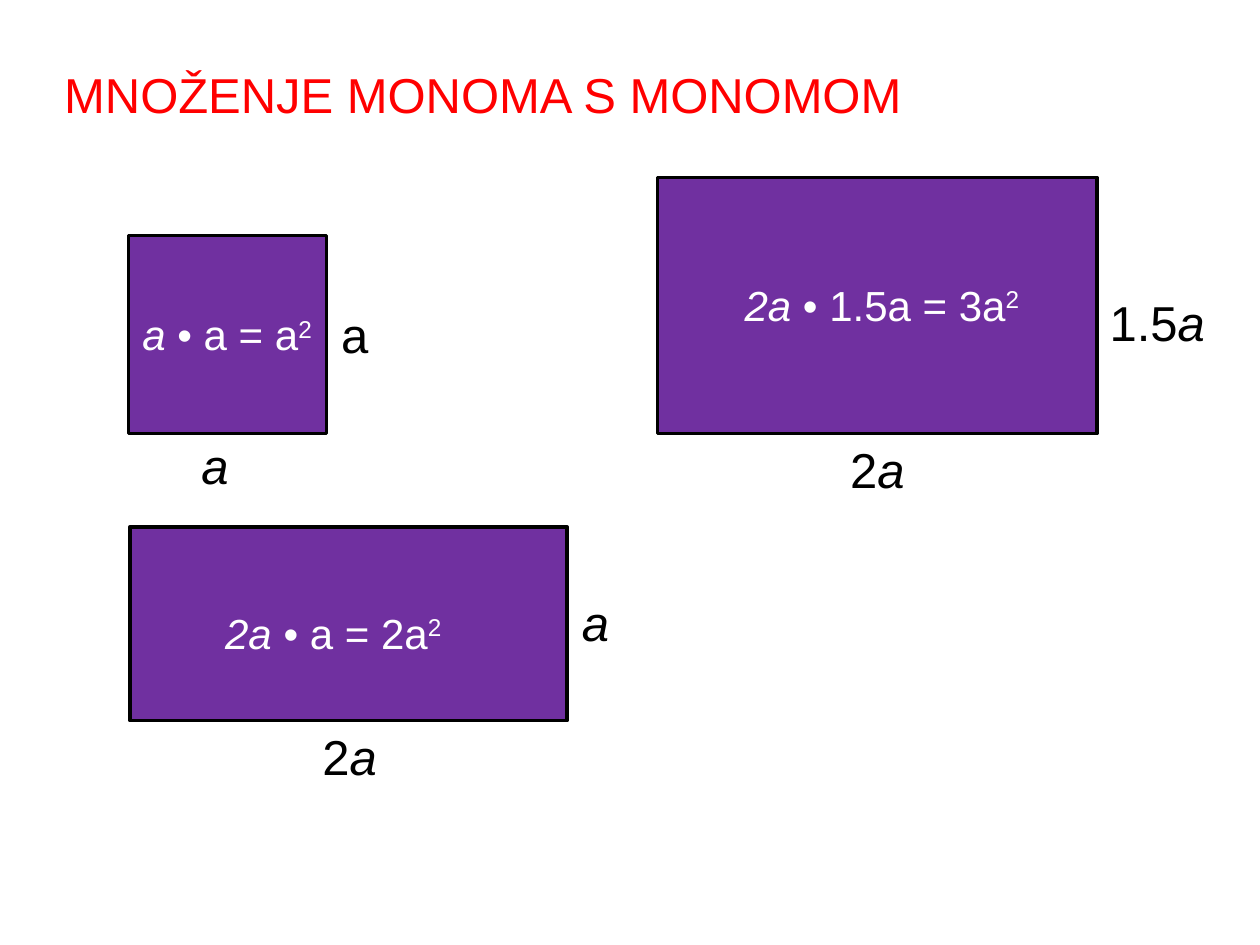
from pptx import Presentation
from pptx.dml.color import RGBColor
from pptx.enum.shapes import MSO_SHAPE
from pptx.enum.text import MSO_ANCHOR, MSO_AUTO_SIZE, PP_ALIGN
from pptx.util import Cm, Pt

RECT = MSO_SHAPE.RECTANGLE
TOP = MSO_ANCHOR.TOP
LEFT = PP_ALIGN.LEFT
FIXED = MSO_AUTO_SIZE.NONE
COLORS = {"title": "FF0000", "fill": "7030A0", "ink": "000000", "light": "FFFFFF"}
HEIGHTS = {28: 1.45, 24: 1.27}

FIGURES = [
    {
        "box": (2.59, 4.75, 3.99, 3.99),
        "base": (3.81, 8.66, 1.55, [("a", "italic")]),
        "side": (6.63, 6.02, 1.55, [("a", "")]),
        "area": (2.62, 6.1, 4.55, "a", " • a = a"),
    },
    {
        "box": (2.62, 10.62, 8.81, 3.91),
        "base": (6.25, 14.53, 2.31, [("2", ""), ("a", "italic")]),
        "side": (11.48, 11.81, 1.55, [("a", "italic")]),
        "area": (4.29, 12.12, 5.77, "2a", " • a = 2a"),
    },
    {
        "box": (13.26, 3.58, 8.86, 5.16),
        "base": (16.89, 8.74, 2.31, [("2", ""), ("a", "italic")]),
        "side": (22.12, 5.77, 2.95, [("1.5", ""), ("a", "italic")]),
        "area": (14.76, 5.51, 6.58, "2a", " • 1.5a = 3a"),
    },
]


def rgb(name):
    """Return the named colour."""
    return RGBColor.from_string(COLORS[name])


def write(frame, runs, size, color):
    """Fill a text frame with styled runs."""
    frame.word_wrap = True
    frame.auto_size = FIXED
    frame.vertical_anchor = TOP
    line = frame.paragraphs[0]
    line.alignment = LEFT
    for text, style in runs:
        run = line.add_run()
        run.text = text
        font = run.font
        font.name = "Arial"
        font.size = Pt(size)
        font.italic = style == "italic"
        font.color.rgb = rgb(color)
        if style == "super":
            run._r.get_or_add_rPr().set("baseline", "30000")


def add_title(slide, text):
    """Place and format the title."""
    title = slide.shapes.title
    title.left, title.top = Cm(1.04), Cm(1.17)
    title.width, title.height = Cm(25.5), Cm(HEIGHTS[28])
    write(title.text_frame, [(text, "")], 28, "title")


def add_box(slide, place):
    """Draw one filled rectangle."""
    box = slide.shapes.add_shape(RECT, *map(Cm, place))
    box.shadow.inherit = False
    box.fill.solid()
    box.fill.fore_color.rgb = rgb("fill")
    box.line.color.rgb = rgb("ink")
    box.line.width = Pt(2)


def add_text(slide, left, top, width, runs, size=28, color="ink"):
    """Add a one-line text box."""
    place = map(Cm, (left, top, width, HEIGHTS[size]))
    write(slide.shapes.add_textbox(*place).text_frame, runs, size, color)


def add_figure(slide, figure):
    """Draw a rectangle with its side labels and area formula."""
    add_box(slide, figure["box"])
    add_text(slide, *figure["base"])
    add_text(slide, *figure["side"])
    *place, first, rest = figure["area"]
    runs = [(first, "italic"), (rest, ""), ("2", "super")]
    add_text(slide, *place, runs, 24, "light")


def main():
    """Build and save the slide."""
    deck = Presentation()
    deck.slide_width, deck.slide_height = Cm(25.4), Cm(19.05)
    slide = deck.slides.add_slide(deck.slide_layouts[5])
    add_title(slide, "MNOŽENJE MONOMA S MONOMOM")
    for figure in FIGURES:
        add_figure(slide, figure)
    deck.save("out.pptx")


if __name__ == "__main__":
    main()
